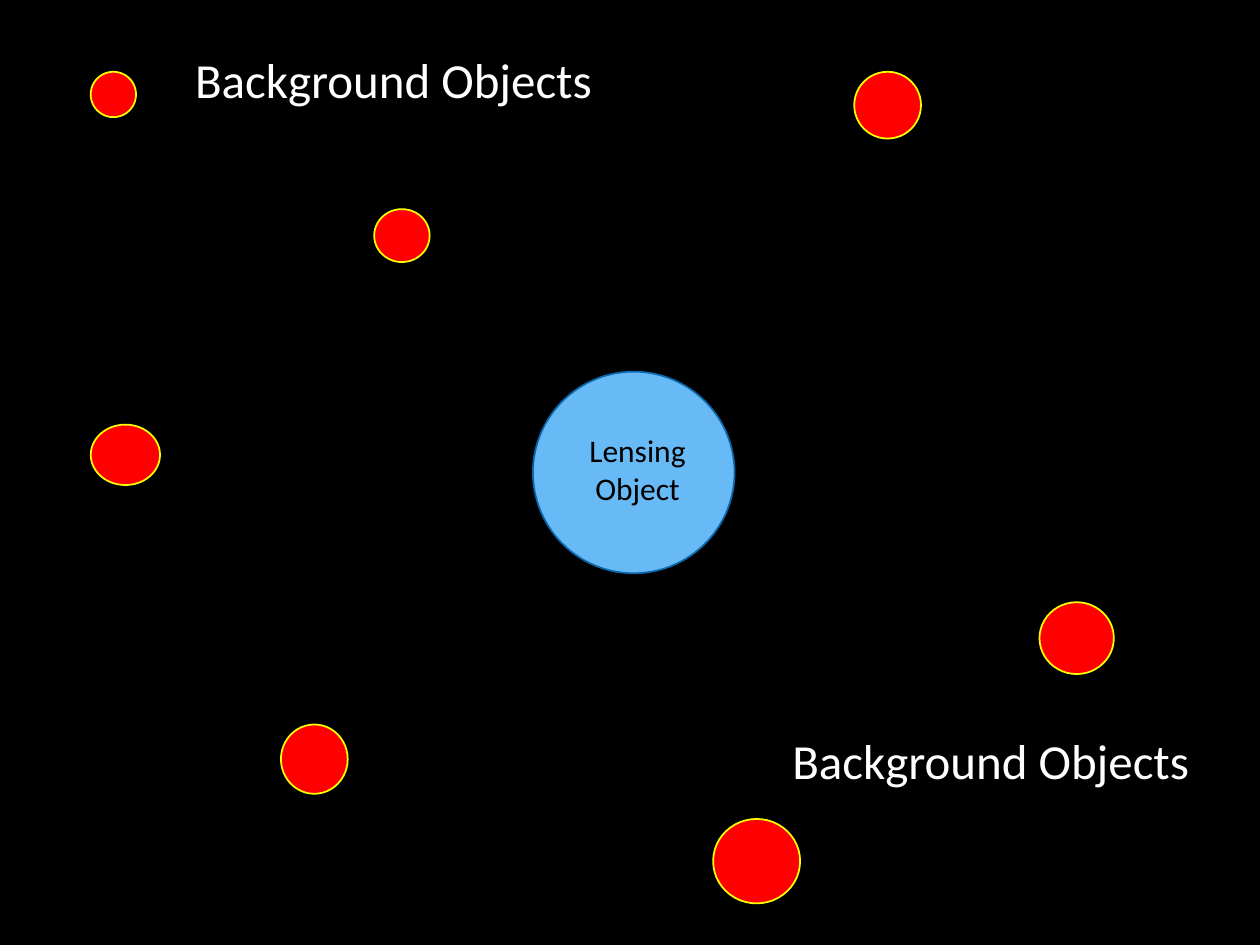
from pptx import Presentation
from pptx import util as u
from pptx.dml.color import RGBColor
from pptx.enum import shapes, text

COLORS = {
    "space": "000000",
    "lens": "67BAF6",
    "lens_edge": "0A68AC",
    "object": "FF0000",
    "object_edge": "FFFF00",
    "label": "FFFFFF",
    "lens_label": "000000",
}

BACKGROUND_OBJECTS = [
    (0.72, 0.57, 0.36, 0.36),
    (6.78, 0.57, 0.53, 0.53),
    (2.23, 5.75, 0.53, 0.55),
    (8.25, 4.78, 0.59, 0.57),
    (2.97, 1.66, 0.44, 0.42),
    (5.66, 6.5, 0.69, 0.67),
    (0.72, 3.37, 0.55, 0.48),
]
LABEL_POSITIONS = [(1.45, 0.34), (6.19, 5.75)]


def color(name):
    return RGBColor.from_string(COLORS[name])


def add_circle(s, box, fill, edge):
    sp = s.shapes.add_shape(shapes.MSO_SHAPE.OVAL, *map(u.Inches, box))
    sp.shadow.inherit = False
    sp.fill.solid()
    sp.fill.fore_color.rgb = color(fill)
    sp.line.color.rgb = color(edge)
    sp.line.width = u.Pt(1)


def add_text(s, content, box, size=28, fill="label", align=text.PP_ALIGN.LEFT):
    sp = s.shapes.add_textbox(*map(u.Inches, box))
    tf = sp.text_frame
    tf.word_wrap = True
    tf.auto_size = text.MSO_AUTO_SIZE.SHAPE_TO_FIT_TEXT
    p = tf.paragraphs[0]
    p.alignment = align
    r = p.add_run()
    r.text = content
    r.font.name = "Calibri"
    r.font.size = u.Pt(size)
    r.font.color.rgb = color(fill)


def main():
    prs = Presentation()
    prs.slide_width, prs.slide_height = u.Inches(10), u.Inches(7.5)
    s = prs.slides.add_slide(prs.slide_layouts[6])
    s.background.fill.solid()
    s.background.fill.fore_color.rgb = color("space")

    add_circle(s, (4.23, 2.95, 1.6, 1.6), "lens", "lens_edge")
    add_text(s, "Lensing Object", (4.46, 3.37, 1.2, 0.71), size=18,
             fill="lens_label", align=text.PP_ALIGN.CENTER)
    for box in BACKGROUND_OBJECTS:
        add_circle(s, box, "object", "object_edge")
    for left, top in LABEL_POSITIONS:
        add_text(s, "Background Objects", (left, top, 3.81, 0.57))

    prs.save("out.pptx")


if __name__ == "__main__":
    main()
